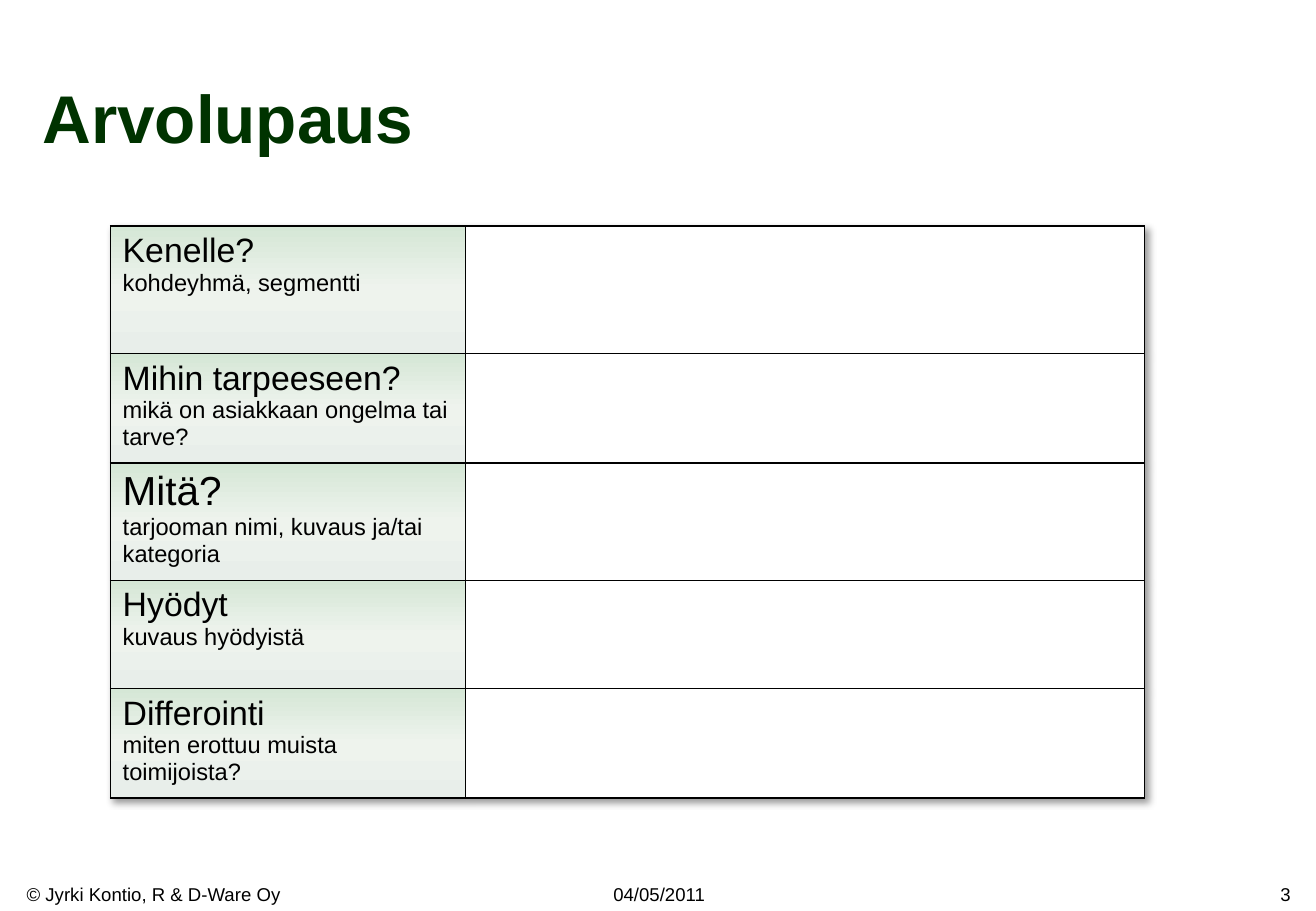
from lxml.etree import fromstring
from pptx import Presentation
from pptx.dml.color import RGBColor as Rgb
from pptx.enum.text import MSO_ANCHOR as Anchor, MSO_AUTO_SIZE as Fit, PP_ALIGN as Align
from pptx.oxml.ns import nsdecls
from pptx.util import Inches, Pt

ROWS = [
    ("Kenelle?", 20, "kohdeyhmä, segmentti"),
    ("Mihin tarpeeseen?", 20, "mikä on asiakkaan ongelma tai tarve?"),
    ("Mitä?", 24, "tarjooman nimi, kuvaus ja/tai kategoria"),
    ("Hyödyt", 20, "kuvaus hyödyistä"),
    ("Differointi", 20, "miten erottuu muista toimijoista?"),
]
FOOT = [
    ("© Jyrki Kontio, R & D-Ware Oy", 0.12, 2.31, Align.LEFT),
    ("04/05/2011", 4.94, 0.97, Align.CENTER),
    ("3", 10.33, 0.39, Align.RIGHT),
]
TINTS = [(0, "D5E7D6"), (50, "EEF3ED"), (100, "E8EEEA")]
NS = nsdecls("a")


def put(item, **vals):
    for key, val in vals.items():
        setattr(item, key, val)


def color(code):
    return Rgb.from_string(code)


def write(para, text, size, code="000000", **vals):
    run = para.add_run()
    run.text = text
    put(run.font, name="Arial", size=Pt(size), **vals)
    run.font.color.rgb = color(code)


def add_title(slide):
    title = slide.shapes.title
    put(title, left=Inches(0.25), top=Inches(0.08), width=Inches(8.5), height=Inches(1.26))
    put(title.text_frame, vertical_anchor=Anchor.BOTTOM, word_wrap=True, auto_size=Fit.NONE)
    para = title.text_frame.paragraphs[0]
    para.alignment = Align.LEFT
    write(para, "Arvolupaus", 40, "003300", bold=True)


def add_foot(slide, text, left, width, align):
    box = slide.shapes.add_textbox(Inches(left), Inches(7.22), Inches(width), Inches(0.28))
    put(box.text_frame, vertical_anchor=Anchor.MIDDLE, word_wrap=False,
        auto_size=Fit.SHAPE_TO_FIT_TEXT)
    para = box.text_frame.paragraphs[0]
    para.alignment = align
    write(para, text, 11)


def add_edges(cell):
    props = cell._tc.get_or_add_tcPr()
    for side in "LRTB":
        props.append(fromstring(
            f'<a:ln{side} {NS} w="{Pt(1)}"><a:solidFill><a:srgbClr val="000000"/>'
            f'</a:solidFill></a:ln{side}>'))


def add_fade(cell):
    stops = "".join(f'<a:gs pos="{pos * 1000}"><a:srgbClr val="{code}"/></a:gs>'
                    for pos, code in TINTS)
    cell._tc.get_or_add_tcPr().append(fromstring(
        f'<a:gradFill {NS} rotWithShape="1"><a:gsLst>{stops}</a:gsLst>'
        f'<a:lin ang="5400000" scaled="0"/></a:gradFill>'))


def add_shade(table):
    table._tbl.tblPr.insert(0, fromstring(
        f'<a:effectLst {NS}><a:outerShdw blurRad="{Pt(4)}" dist="{Pt(3)}" dir="2700000" '
        f'algn="tl" rotWithShape="0"><a:srgbClr val="000000"><a:alpha val="40000"/>'
        f'</a:srgbClr></a:outerShdw></a:effectLst>'))


def add_grid(slide):
    frame = slide.shapes.add_table(len(ROWS), 2, Inches(0.91), Inches(1.86),
                                   Inches(8.51), Inches(4.61))
    table = frame.table
    put(table, first_row=False, horz_banding=False)
    add_shade(table)
    for col, width in zip(table.columns, (2.92, 5.59)):
        col.width = Inches(width)
    for i, (head, size, note) in enumerate(ROWS):
        table.rows[i].height = Inches(0.89 if i else 1.05)
        label, blank = table.rows[i].cells
        add_edges(label)
        add_fade(label)
        add_edges(blank)
        blank.fill.solid()
        blank.fill.fore_color.rgb = color("FFFFFF")
        write(label.text_frame.paragraphs[0], head, size)
        write(label.text_frame.add_paragraph(), note, 14)


def main():
    deck = Presentation()
    put(deck, slide_width=Inches(10.83), slide_height=Inches(7.5))
    slide = deck.slides.add_slide(deck.slide_layouts[5])
    for foot in FOOT:
        add_foot(slide, *foot)
    add_title(slide)
    add_grid(slide)
    deck.save("out.pptx")


if __name__ == "__main__":
    main()
